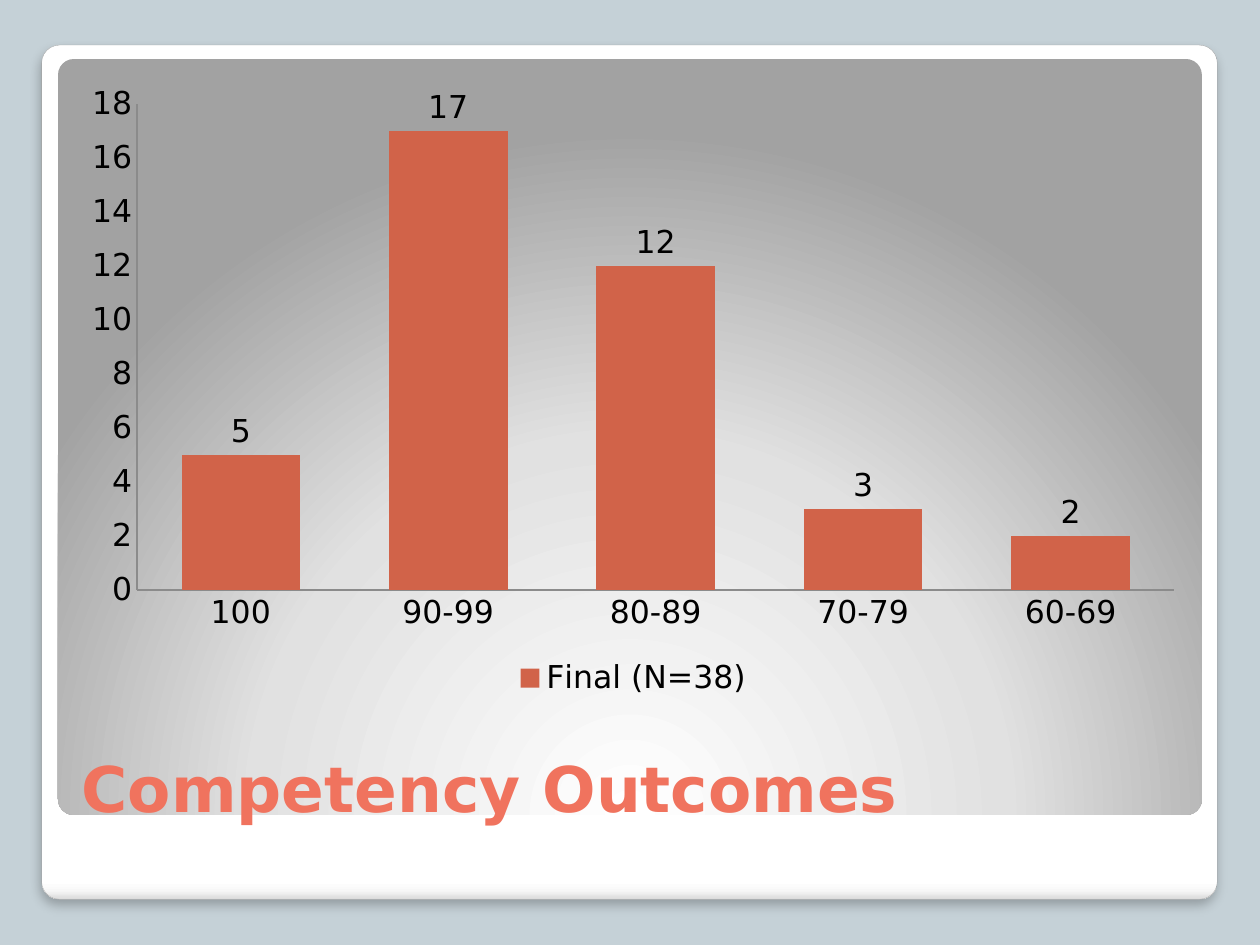
from pptx import Presentation
from pptx.chart.data import CategoryChartData
from pptx.dml.color import RGBColor
from pptx.enum.chart import XL_CHART_TYPE, XL_LABEL_POSITION, XL_LEGEND_POSITION, XL_TICK_MARK
from pptx.enum.shapes import MSO_SHAPE
from pptx.enum.text import MSO_ANCHOR
from pptx.oxml import parse_xml
from pptx.oxml.ns import nsdecls
from pptx.util import Cm, Pt

FONT = "DejaVu Sans"
TITLE = "Competency Outcomes"
SERIES = "Final (N=38)"
OUTCOMES = {"100": 5, "90-99": 17, "80-89": 12, "70-79": 3, "60-69": 2}

# left, top, width, height in cm
CARD = (0.84, 0.91, 23.7, 17.22)
PANEL = (1.17, 1.19, 23.06, 15.24)
CHART = (1.4, 1.47, 22.73, 12.7)
TITLE_BOX = (1.4, 13.84, 22.73, 2.92)

CARD_STOPS = [(0, "FFFFFF"), (98, "FFFFFF"), (99, "F7F7F7"), (100, "DADADA")]
PANEL_STOPS = [(0, "FFFFFF"), (55, "E1E1E1"), (100, "A2A2A2")]
DOWNWARD = '<a:lin ang="5400000" scaled="0"/>'
FROM_BOTTOM = ('<a:path path="circle"><a:fillToRect l="50000" t="175000" '
               'r="50000" b="-75000"/></a:path>')
SOFT_SHADOW = ('<a:outerShdw %s blurRad="76200" dist="50800" dir="5400000" '
               'algn="tl" rotWithShape="0"><a:srgbClr val="000000">'
               '<a:alpha val="25000"/></a:srgbClr></a:outerShdw>' % nsdecls("a"))


def rgb(value):
    return RGBColor.from_string(value)


def cm(box):
    return [Cm(v) for v in box]


def set_font(font, **values):
    for name, value in {"name": FONT, **values}.items():
        if name == "color":
            font.color.rgb = rgb(value)
        else:
            setattr(font, name, value)


def add_rounded(s, box, stops, direction):
    """Add a borderless rounded rectangle with a gradient fill."""
    sp = s.shapes.add_shape(MSO_SHAPE.ROUNDED_RECTANGLE, *cm(box))
    sp.adjustments[0] = 0.021
    marks = "".join(f'<a:gs pos="{pos * 1000}"><a:srgbClr val="{color}"/></a:gs>'
                    for pos, color in stops)
    sp.element.spPr.append(parse_xml(
        f'<a:gradFill {nsdecls("a")} rotWithShape="1"><a:gsLst>{marks}</a:gsLst>'
        f'{direction}</a:gradFill>'))
    sp.line.fill.background()
    sp.shadow.inherit = False
    return sp


def add_outcome_chart(s):
    data = CategoryChartData()
    data.categories = list(OUTCOMES)
    data.add_series(SERIES, list(OUTCOMES.values()))
    chart = s.shapes.add_chart(XL_CHART_TYPE.COLUMN_CLUSTERED, *cm(CHART), data).chart
    set_font(chart.font, size=Pt(18), color="000000")
    chart.has_title = False
    chart.has_legend = True
    chart.legend.position = XL_LEGEND_POSITION.BOTTOM
    chart.legend.include_in_layout = False

    for axis in (chart.category_axis, chart.value_axis):
        axis.has_major_gridlines = False
        axis.major_tick_mark = axis.minor_tick_mark = XL_TICK_MARK.NONE
        axis.format.line.color.rgb = rgb("8B8B8B")
        axis.format.line.width = Pt(0.75)
    for name, value in {"minimum_scale": 0, "maximum_scale": 18, "major_unit": 2}.items():
        setattr(chart.value_axis, name, value)

    plot = chart.plots[0]
    plot.gap_width = 75
    plot.vary_by_categories = False
    plot.has_data_labels = True
    plot.data_labels.show_value = True
    plot.data_labels.position = XL_LABEL_POSITION.OUTSIDE_END
    fill = plot.series[0].format.fill
    fill.solid()
    fill.fore_color.rgb = rgb("D16349")


def add_title(s):
    tf = s.shapes.add_textbox(*cm(TITLE_BOX)).text_frame
    tf.word_wrap = True
    tf.vertical_anchor = MSO_ANCHOR.BOTTOM
    r = tf.paragraphs[0].add_run()
    r.text = TITLE
    set_font(r.font, size=Pt(36), bold=True, color="F0735E")


def main():
    prs = Presentation()
    prs.slide_width, prs.slide_height = Cm(25.4), Cm(19.05)
    s = prs.slides.add_slide(prs.slide_layouts[6])
    s.background.fill.solid()
    s.background.fill.fore_color.rgb = rgb("C5D1D7")

    card = add_rounded(s, CARD, CARD_STOPS, DOWNWARD)
    card.line.color.rgb = rgb("A4A4A4")
    card.line.width = Pt(0.16)
    card.element.spPr[-1].append(parse_xml(SOFT_SHADOW))
    add_rounded(s, PANEL, PANEL_STOPS, FROM_BOTTOM)
    add_title(s)
    add_outcome_chart(s)
    prs.save("out.pptx")


if __name__ == "__main__":
    main()
